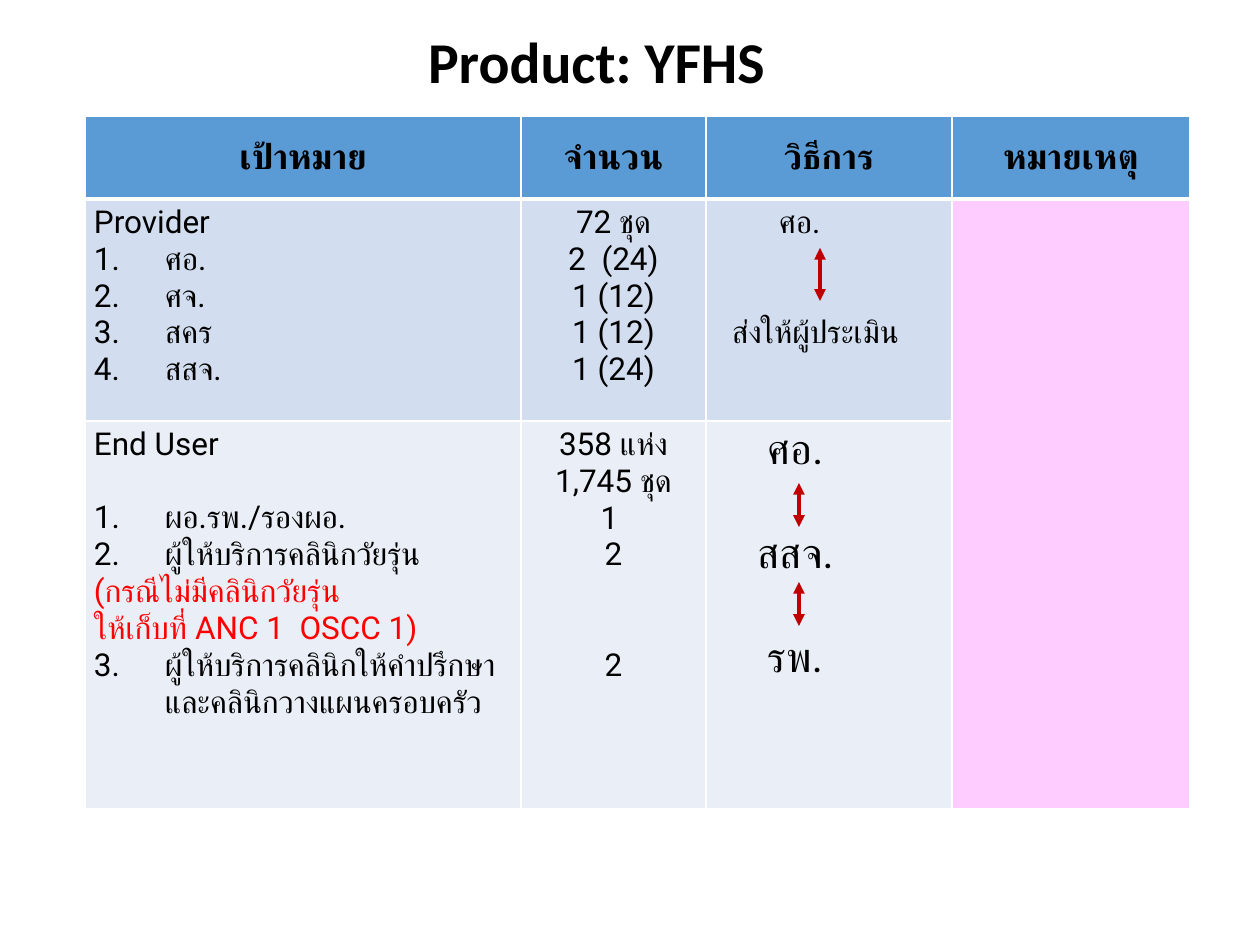
from dataclasses import dataclass

import pptx
import pptx.dml.color
import pptx.enum.shapes
import pptx.enum.text
import pptx.oxml
import pptx.oxml.ns
import pptx.oxml.xmlchemy
import pptx.util

RGBColor = pptx.dml.color.RGBColor
Align = pptx.enum.text.PP_ALIGN
Anchor = pptx.enum.text.MSO_ANCHOR

PX = 914400 / 126
BLACK = RGBColor(0x00, 0x00, 0x00)
WHITE = RGBColor(0xFF, 0xFF, 0xFF)
RED = RGBColor(0xFF, 0x00, 0x00)
DARK_RED = RGBColor(0xC0, 0x00, 0x00)
HEADER_BLUE = RGBColor(0x5B, 0x9B, 0xD5)
PROVIDER_BLUE = RGBColor(0xD2, 0xDE, 0xEF)
USER_BLUE = RGBColor(0xEA, 0xEF, 0xF7)
PINK = RGBColor(0xFF, 0xCC, 0xFF)

COLUMN_WIDTHS = (436, 185, 246, 238)
ROW_HEIGHTS = (83, 222, 388)
HEADINGS = ("เป้าหมาย", "จำนวน", "วิธีการ", "หมายเหตุ")
NUMBER_INDENT = 71


@dataclass(frozen=True)
class Line:
    """One paragraph; number makes it a list item, before is spacing in points."""
    text: str
    number: int = 0
    before: int = 0
    indent: int = 0
    size: int = 18
    color: RGBColor = BLACK
    bold: bool = False
    align: Align = Align.LEFT
    font: str = "Roboto"


@dataclass(frozen=True)
class Arrow:
    x: int
    top: int
    bottom: int


def centred(text: str, before: int = 0) -> Line:
    return Line(text, before=before, align=Align.CENTER)


TARGETS = (
    (Line("Provider"), Line("ศอ.", 1), Line("ศจ.", 2), Line("สคร", 3), Line("สสจ.", 4)),
    (Line("End User"),
     Line("ผอ.รพ./รองผอ.", 1, before=21),
     Line("ผู้ให้บริการคลินิกวัยรุ่น", 2),
     Line("(กรณีไม่มีคลินิกวัยรุ่น", color=RED),
     Line("ให้เก็บที่ ANC 1  OSCC 1)", color=RED),
     Line("ผู้ให้บริการคลินิกให้คำปรึกษา และคลินิกวางแผนครอบครัว", 3)),
)
AMOUNTS = (
    (centred("72 ชุด"), centred("2  (24)"), centred("1 (12)"),
     centred("1 (12)"), centred("1 (24)")),
    (centred("358 แห่ง 1,745 ชุด"), centred("1 "), centred("2"), centred("2", before=42)),
)
METHODS = (
    (Line("ศอ.", indent=64), Line("ส่งให้ผู้ประเมิน", before=42, indent=17)),
    (Line("ศอ.", indent=53, size=24),
     Line("สสจ.", before=31, indent=43, size=24),
     Line("รพ.", before=31, indent=53, size=24)),
)
ARROWS = (Arrow(820, 248, 301), Arrow(799, 483, 527), Arrow(799, 582, 626))


def px(length: int) -> pptx.util.Emu:
    return pptx.util.Emu(round(length * PX))


def add_child(parent: pptx.oxml.xmlchemy.BaseOxmlElement, tag: str,
              **attributes: str) -> pptx.oxml.xmlchemy.BaseOxmlElement:
    child = pptx.oxml.xmlchemy.OxmlElement(tag)
    for key, value in attributes.items():
        child.set(key, value)
    parent.append(child)
    return child


def write_lines(frame, lines: tuple[Line, ...]) -> None:
    frame.word_wrap = True
    for index, line in enumerate(lines):
        paragraph = frame.paragraphs[0] if index == 0 else frame.add_paragraph()
        paragraph.alignment = line.align
        paragraph.space_before = pptx.util.Pt(line.before)
        properties = paragraph._p.get_or_add_pPr()
        indent = NUMBER_INDENT if line.number else line.indent
        properties.set("marL", str(px(indent)))
        properties.set("indent", str(px(-indent if line.number else 0)))
        if line.number:
            add_child(properties, "a:buFont", typeface=line.font)
            add_child(properties, "a:buAutoNum", type="arabicPeriod",
                      startAt=str(line.number))
        run = paragraph.add_run()
        run.text = line.text
        run.font.size = pptx.util.Pt(line.size)
        run.font.bold = line.bold
        run.font.color.rgb = line.color
        run.font.name = line.font
        add_child(run._r.get_or_add_rPr(), "a:cs", typeface=line.font)


def style_cell(cell, fill: RGBColor, top: int = 1, bottom: int = 1) -> None:
    """Set white borders (points), margins and fill."""
    properties = cell._tc.get_or_add_tcPr()
    for side, width in (("L", 1), ("R", 1), ("T", top), ("B", bottom)):
        border = add_child(properties, f"a:ln{side}", w=str(pptx.util.Pt(width)))
        add_child(add_child(border, "a:solidFill"), "a:srgbClr", val=str(WHITE))
    cell.margin_left = cell.margin_right = px(9)
    cell.margin_top = cell.margin_bottom = px(5)
    cell.fill.solid()
    cell.fill.fore_color.rgb = fill


def add_title(slide) -> None:
    box = slide.shapes.add_textbox(px(124), px(20), px(945), px(80))
    box.text_frame.vertical_anchor = Anchor.MIDDLE
    write_lines(box.text_frame, (Line("Product: YFHS", size=33, bold=True,
                                      align=Align.CENTER, font="Calibri"),))


def add_plan_table(slide) -> None:
    table = slide.shapes.add_table(
        len(ROW_HEIGHTS), len(COLUMN_WIDTHS), px(85), px(116),
        px(sum(COLUMN_WIDTHS)), px(sum(ROW_HEIGHTS))).table
    for column, width in zip(table.columns, COLUMN_WIDTHS):
        column.width = px(width)
    for row, height in zip(table.rows, ROW_HEIGHTS):
        row.height = px(height)

    for column, heading in enumerate(HEADINGS):
        cell = table.cell(0, column)
        style_cell(cell, HEADER_BLUE, bottom=3)
        cell.vertical_anchor = Anchor.MIDDLE
        write_lines(cell.text_frame,
                    (Line(heading, size=20, bold=True, align=Align.CENTER),))

    groups = zip((PROVIDER_BLUE, USER_BLUE), TARGETS, AMOUNTS, METHODS)
    for row, (fill, *contents) in enumerate(groups, start=1):
        top = 3 if row == 1 else 1
        for column, lines in enumerate(contents):
            cell = table.cell(row, column)
            style_cell(cell, fill, top=top)
            write_lines(cell.text_frame, lines)
        style_cell(table.cell(row, 3), PINK, top=top)
    table.cell(1, 3).merge(table.cell(2, 3))


def add_arrow(slide, arrow: Arrow) -> None:
    connector = slide.shapes.add_connector(
        pptx.enum.shapes.MSO_CONNECTOR.STRAIGHT,
        px(arrow.x), px(arrow.bottom), px(arrow.x), px(arrow.top))
    connector.line.color.rgb = DARK_RED
    connector.line.width = pptx.util.Pt(2.25)
    outline = connector.line._get_or_add_ln()
    for end in ("a:headEnd", "a:tailEnd"):
        add_child(outline, end, type="triangle")
    add_child(connector._element.spPr, "a:effectLst")


def main() -> None:
    presentation = pptx.Presentation()
    presentation.slide_width = px(1260)
    presentation.slide_height = px(945)
    slide = presentation.slides.add_slide(presentation.slide_layouts[6])
    add_title(slide)
    add_plan_table(slide)
    for arrow in ARROWS:
        add_arrow(slide, arrow)
    presentation.save("out.pptx")


if __name__ == "__main__":
    main()
